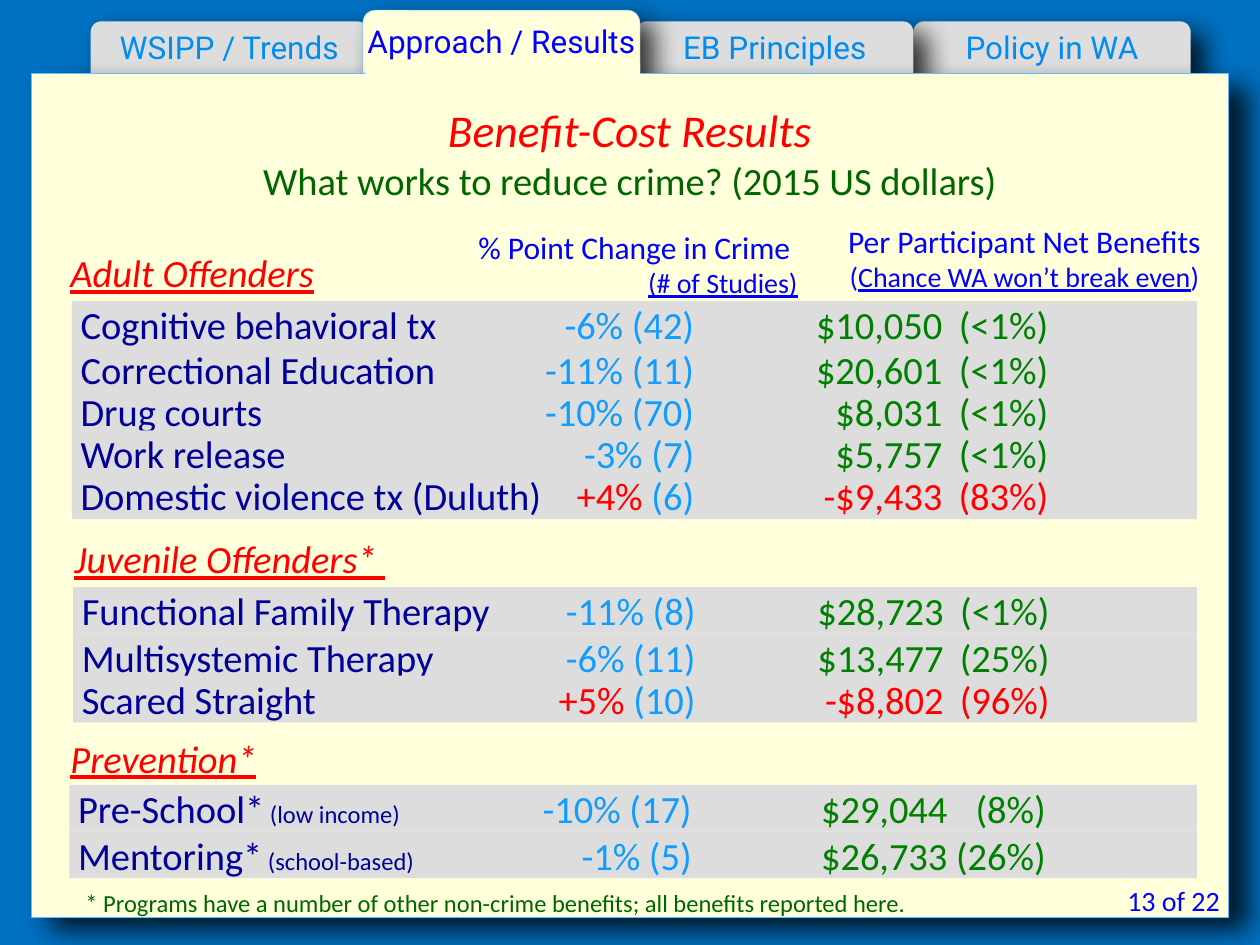
from lxml.etree import SubElement as Sub
from pptx import Presentation
from pptx.dml.color import RGBColor as Rgb
from pptx.enum.shapes import MSO_SHAPE as Kind
from pptx.enum.text import MSO_ANCHOR as Anchor, PP_ALIGN as Align
from pptx.oxml.ns import qn
from pptx.util import Inches, Pt

HUE = {
    "back": "0070C0", "page": "FFFFDC", "edge": "60BDFF", "band": "DDDDDD",
    "tab": "008CF0", "blue": "0000FF", "navy": "000099", "sky": "119CFF",
    "good": "008000", "bad": "FF0000", "dark": "006600", "black": "000000",
}
UNIT = Inches(0.1)
COLS, ROWS = 100, 75
LINE = 3.7
STEP = 10 / 3
INSET = 0.07

ADULT = [
    ("Cognitive behavioral tx", "", "-6%", "(42)", "$10,050", "(<1%)"),
    ("Correctional Education", "", "-11%", "(11)", "$20,601", "(<1%)"),
    ("Drug courts", "", "-10%", "(70)", "$8,031", "(<1%)"),
    ("Work release", "", "-3%", "(7)", "$5,757", "(<1%)"),
    ("Domestic violence tx (Duluth)", "", "+4%", "(6)", "-$9,433", "(83%)"),
]
YOUTH = [
    ("Functional Family Therapy", "", "-11%", "(8)", "$28,723", "(<1%)"),
    ("Multisystemic Therapy", "", "-6%", "(11)", "$13,477", "(25%)"),
    ("Scared Straight", "", "+5%", "(10)", "-$8,802", "(96%)"),
]
EARLY = [
    ("Pre-School*", " (low income)", "-10%", "(17)", "$29,044", "(8%)"),
    ("Mentoring*", " (school-based)", "-1%", "(5)", "$26,733", "(26%)"),
]


def place(box):
    """Turn grid columns and rows into slide lengths."""
    return [round(n * UNIT) for n in box]


def paint(run, size, hue, font="Calibri", slant=False, under=False):
    """Format one run."""
    run.font.size, run.font.name = Pt(size), font
    run.font.color.rgb = Rgb.from_string(HUE[hue])
    run.font.italic, run.font.underline = slant, under


def add(par, text, *look, **more):
    """Append a formatted run to a paragraph."""
    run = par.add_run()
    run.text = text
    paint(run, *look, **more)


def pad(frame, left=0, top=0, right=0, foot=0):
    """Set the insets of a text frame in inches."""
    frame.margin_left, frame.margin_top = Inches(left), Inches(top)
    frame.margin_right, frame.margin_bottom = Inches(right), Inches(foot)


def block(slide, box, hue, kind=Kind.RECTANGLE, edge=0, cast=None):
    """Draw a filled shape with optional edge and cast shadow."""
    shape = slide.shapes.add_shape(kind, *place(box))
    shape.fill.solid()
    shape.fill.fore_color.rgb = Rgb.from_string(HUE[hue])
    if edge:
        shape.line.color.rgb = Rgb.from_string(HUE["edge"])
        shape.line.width = Pt(edge)
    else:
        shape.line.fill.background()
    shape.shadow.inherit = False
    if cast:
        far, turn = cast
        glow = Sub(shape._element.spPr.find(qn("a:effectLst")), qn("a:outerShdw"),
                   blurRad=str(Pt(15)), dist=str(Pt(far)), dir=str(turn * 60000),
                   algn="tl", rotWithShape="0")
        tint = Sub(glow, qn("a:srgbClr"), val=HUE["black"])
        Sub(tint, qn("a:alpha"), val="79000")
    return shape


def label(slide, box, lines, align=Align.LEFT, tight=False):
    """Write lines, each a list of runs, in a text box."""
    frame = slide.shapes.add_textbox(*place(box)).text_frame
    frame.word_wrap = True
    if tight:
        pad(frame)
    for at, runs in enumerate(lines):
        par = frame.add_paragraph() if at else frame.paragraphs[0]
        par.alignment = align
        for text, look, more in runs:
            add(par, text, *look, **more)


def tab(slide, box, text, live=False):
    """Draw one folder tab, highlighted when live."""
    shape = block(slide, box, "page" if live else "band", Kind.ROUNDED_RECTANGLE,
                  0.25 if live else 0, (10, 40))
    frame = shape.text_frame
    frame.word_wrap = True
    pad(frame, foot=0.1)
    frame.vertical_anchor = Anchor.MIDDLE
    frame.text = text
    par = frame.paragraphs[0]
    par.alignment = Align.CENTER
    paint(par.runs[0], 18, "blue" if live else "tab", "Roboto")


def folder(slide, box):
    """Draw the tabs and the page below them."""
    left, top, wide, high = box
    for shift, text in ((70, "Policy in WA"), (48, "EB Principles"),
                        (4.7, "WSIPP / Trends")):
        tab(slide, (left + shift, top - 4.1, 22, 5), text)
    tab(slide, (left + 26.3, top - 5, 22, 5.9), "Approach / Results", True)
    block(slide, box, "page", edge=0.05, cast=(14, 36))
    block(slide, (left + 26.5, top - 0.8, 21.8, 1.1), "page")


def heads(slide, box):
    """Write the title and the two column heads."""
    left, top, wide, high = box
    label(slide, (left, top, wide, 9.1), [
        [("Benefit-Cost Results", (26, "bad"), {"slant": True})],
        [("What works to reduce crime? (2015 US dollars)", (22, "dark"), {})],
    ], Align.CENTER)
    line = {"under": True}
    label(slide, (left + 30, top + 10.5, 30.8, 5.7), [
        [("% Point Change in Crime ", (18, "blue"), {})],
        [("(# of Studies)", (16, "blue"), line)],
    ], Align.RIGHT, True)
    label(slide, (left + 64.2, top + 10, 29.2, 5.7), [
        [("Per Participant Net Benefits", (18, "blue"), {})],
        [("(", (16, "blue"), {}), ("Chance WA won’t break even", (16, "blue"), line),
         (")", (16, "blue"), {})],
    ], Align.CENTER, True)


def entry(slide, box, cells, stops):
    """Draw one result row with right-aligned tab stops."""
    name, note, change, count, money, chance = cells
    poor = change.startswith("+")
    frame = block(slide, box, "band").text_frame
    frame.word_wrap = True
    pad(frame, left=INSET)
    frame.vertical_anchor = Anchor.TOP
    par = frame.paragraphs[0]
    par.alignment = Align.LEFT
    tabs = Sub(par._p.get_or_add_pPr(), qn("a:tabLst"))
    for stop in stops:
        Sub(tabs, qn("a:tab"), pos=str(Inches(stop - INSET)), algn="r")
    add(par, name, 22, "navy")
    if note:
        add(par, note, 14, "navy")
    add(par, f"\t{change}", 22, "bad" if poor else "sky")
    add(par, f" {count}", 22, "sky")
    add(par, f"\t{money}\t{chance}", 22, "bad" if poor else "good")


def group(slide, box, title, shift, rows, first=LINE, sum_at=6.91):
    """Write a group heading and its result rows."""
    left, top, wide, gap = box
    label(slide, (left + shift, top, 55, LINE),
          [[(title, (22, "bad"), {"slant": True, "under": True})]], tight=True)
    for at, cells in enumerate(rows):
        drop = gap + (first + (at - 1) * STEP if at else 0)
        entry(slide, (left, top + drop, wide, LINE), cells, (4.94, sum_at, 7.75))


def foot(slide, box):
    """Write the footnote and the page count."""
    left, top, wide, high = box
    label(slide, (left, top, 84.2, high), [[(
        "* Programs have a number of other non-crime benefits; "
        "all benefits reported here.", (14, "dark"), {})]])
    label(slide, (left + wide - 13.6, top - 0.4, 13.6, high),
          [[("13 of 22", (16, "blue"), {})]], Align.RIGHT)


def main():
    """Build and save the slide."""
    deck = Presentation()
    deck.slide_width, deck.slide_height = COLS * UNIT, ROWS * UNIT
    slide = deck.slides.add_slide(deck.slide_layouts[6])
    slide.background.fill.solid()
    slide.background.fill.fore_color.rgb = Rgb.from_string(HUE["back"])
    folder(slide, (2.5, 5.8, 95, 67))
    heads(slide, (2.5, 7.6, 95, 16))
    group(slide, (5.7, 19.8, 89.3, 4.1), "Adult Offenders", -0.1, ADULT, 3.6)
    group(slide, (5.8, 42.5, 89.2, 4.1), "Juvenile Offenders* ", 0.1, YOUTH)
    group(slide, (5.5, 58.3, 89.5, 4), "Prevention*", 0.1, EARLY, sum_at=6.97)
    foot(slide, (5.8, 70, 92, 3.4))
    deck.save("out.pptx")


if __name__ == "__main__":
    main()
